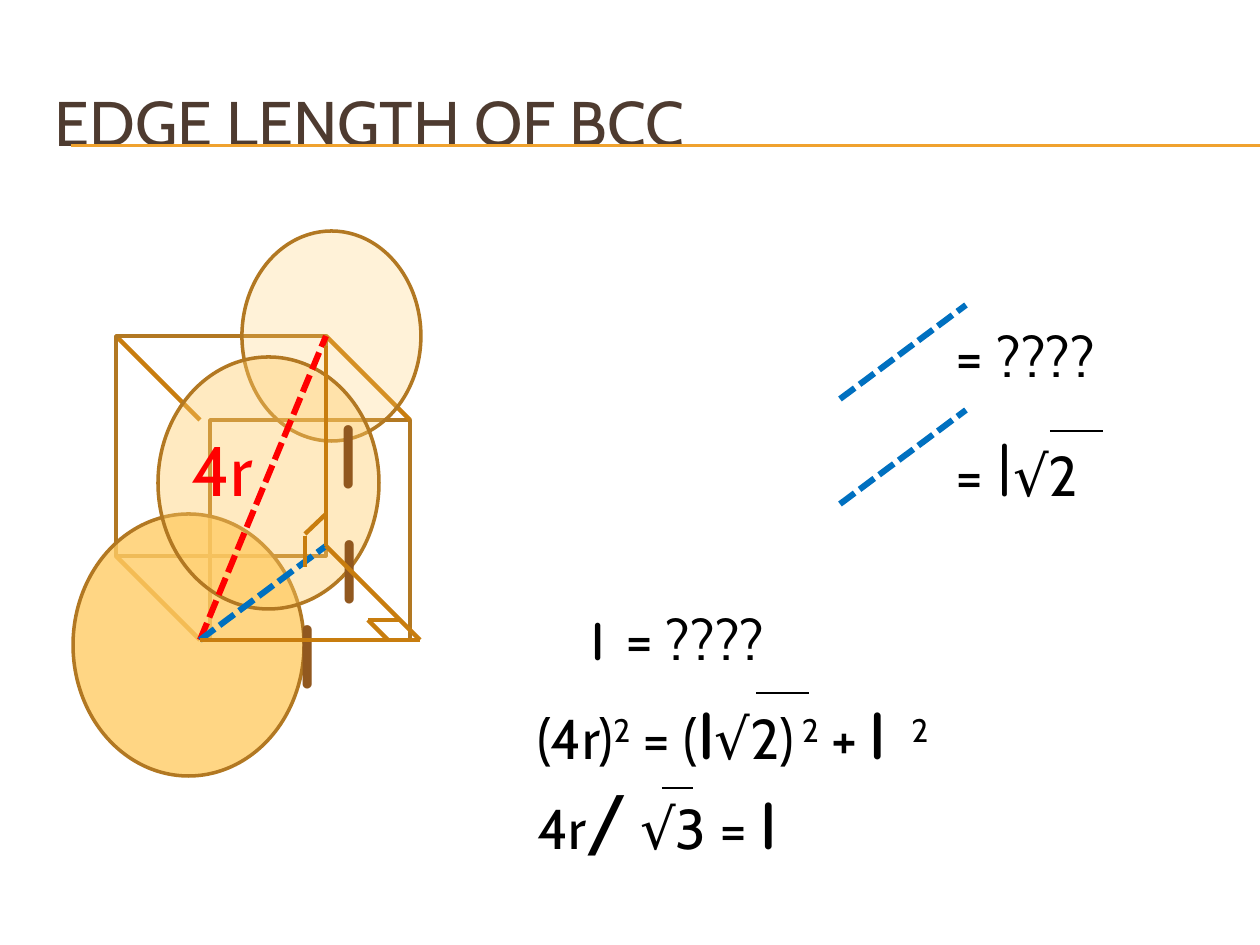
from lxml.etree import SubElement
from pptx import Presentation
from pptx.dml.color import RGBColor
from pptx.enum.dml import MSO_LINE
from pptx.enum.shapes import MSO_CONNECTOR, MSO_SHAPE
from pptx.enum.text import MSO_ANCHOR, MSO_AUTO_SIZE, PP_ALIGN
from pptx.oxml.ns import qn
from pptx.util import Emu, Pt

COLORS = {
    "rule": "F0A22E", "title": "4E3B30", "edge": "C87D0E", "outline": "B27822",
    "atom": "FFCC66", "diagonal": "FF0000", "base": "0070C0",
    "length": "91581F", "ink": "000000",
}
BODY, SYMBOL = "Cabin", "Comic Neue"


def px(length):
    """Turn pixels at 126 to the inch into EMU."""
    return Emu(round(length * 914400 / 126))


def rgb(name):
    """Look up a colour by its role."""
    return RGBColor.from_string(COLORS[name])


def add_line(slide, start, end, color, width, dashed=False):
    """Draw a straight line without a shadow."""
    line = slide.shapes.add_connector(
        MSO_CONNECTOR.STRAIGHT, *map(px, (*start, *end)))
    line.line.color.rgb = rgb(color)
    line.line.width = Pt(width)
    if dashed:
        line.line.dash_style = MSO_LINE.SQUARE_DOT
    SubElement(line.element.spPr, qn("a:effectLst"))


def add_outlined(slide, preset, box, opacity=None):
    """Draw a cube face, or an atom when an opacity is given."""
    outlined = slide.shapes.add_shape(preset, *map(px, box))
    outlined.shadow.inherit = False
    outlined.line.color.rgb = rgb("outline")
    outlined.line.width = Pt(2)
    if opacity is None:
        outlined.fill.background()
        return
    outlined.fill.solid()
    outlined.fill.fore_color.rgb = rgb("atom")
    tint = outlined.element.spPr.find(qn("a:solidFill")).find(qn("a:srgbClr"))
    SubElement(tint, qn("a:alpha"), val=str(opacity * 1000))


def format_run(run, size, color, font=BODY, bold=False, raised=False):
    """Set the look of one run."""
    run.font.size = Pt(size)
    run.font.name = font
    run.font.bold = bold
    run.font.color.rgb = rgb(color)
    if raised:
        run.font._element.set("baseline", "30000")


def add_text(slide, box, parts, color="ink", wrap=False, indent=0):
    """Write one line of text from (text, size, options) parts."""
    frame = slide.shapes.add_textbox(*map(px, box)).text_frame
    frame.word_wrap = wrap
    frame.auto_size = MSO_AUTO_SIZE.SHAPE_TO_FIT_TEXT
    frame.margin_left += px(indent)
    for text, size, options in parts:
        run = frame.paragraphs[0].add_run()
        run.text = text
        format_run(run, size, color, **options)


def add_title(slide):
    """Place the heading and its double rule."""
    title = slide.shapes.title
    title.left, title.top, title.width, title.height = map(px, (42, 63, 1197, 116))
    frame = title.text_frame
    frame.text = "EDGE LENGTH OF BCC"
    frame.vertical_anchor = MSO_ANCHOR.MIDDLE
    frame.paragraphs[0].alignment = PP_ALIGN.LEFT
    format_run(frame.paragraphs[0].runs[0], 36, "title")
    for y in (145, 146):
        add_line(slide, (71, y), (1260, y), "rule", 0.75)


def add_unit_cell(slide):
    """Draw the cube with its three atoms."""
    add_line(slide, (116, 336), (200, 420), "edge", 2.5)
    for face in ((116, 336, 210, 220), (210, 420, 200, 220)):
        add_outlined(slide, MSO_SHAPE.RECTANGLE, face)
    for x, y in ((326, 336), (116, 556)):
        add_line(slide, (x, y), (x + 84, y + 84), "edge", 2.5)
    atoms = (((242, 231, 179, 210), 25), ((73, 514, 231, 262), 80),
             ((158, 357, 221, 252), 40))
    for box, opacity in atoms:
        add_outlined(slide, MSO_SHAPE.OVAL, box, opacity)


def add_triangles(slide):
    """Draw the diagonals, edges, right angles and length labels."""
    near, top, back, side = (200, 640), (326, 336), (326, 546), (420, 640)
    add_line(slide, near, top, "diagonal", 3.5, dashed=True)
    add_line(slide, near, back, "base", 3.5, dashed=True)
    edges = ((back, side), (near, side), (back, (326, 346)))
    right_angles = (((368, 620), (399, 620)), ((368, 620), (388, 640)),
                    ((305, 534), (326, 514)), ((305, 536), (305, 567)))
    add_text(slide, (179, 420, 91, 97), [("4r", 40, {})], "diagonal")
    for x, y in ((284, 588), (325, 388), (326, 503)):
        add_text(slide, (x, y, 43, 127),
                 [("l", 54, {"font": SYMBOL, "bold": True})], "length")
    for start, end in edges + right_angles:
        add_line(slide, start, end, "edge", 2.5)


def add_equations(slide):
    """Write the equations with their root bars and line keys."""
    strong = {"font": SYMBOL, "bold": True}
    raised = {"raised": True}
    add_text(slide, (567, 598, 226, 81),
             [(" ", 32, {}), ("l ", 32, strong), ("= ????", 32, {})])
    add_text(slide, (882, 315, 257, 81), [("= ????", 32, {})], indent=61)
    add_text(slide, (882, 413, 222, 106),
             [("= ", 32, {}), ("l", 44, {"font": SYMBOL}), ("√2", 32, {})],
             indent=61)
    add_text(slide, (525, 683, 630, 97),
             [("(4r)", 32, {}), ("2", 32, raised), (" = (", 32, {}),
              ("l", 40, strong), ("√2)", 32, {}), (" 2", 32, raised),
              (" + ", 32, {}), ("l ", 40, strong), ("2", 32, raised)], wrap=True)
    add_text(slide, (525, 766, 630, 106),
             [("4r", 32, {}), ("/", 44, {}), (" √3 = ", 32, {}),
              ("l", 40, strong)], wrap=True)
    for y in (399, 504):
        add_line(slide, (840, y), (966, y - 94), "base", 3.5, dashed=True)
    for left, right, y in ((1050, 1103, 431), (756, 809, 693), (662, 693, 788)):
        add_line(slide, (left, y), (right, y), "ink", 1.5)


def main():
    """Build and save the slide."""
    deck = Presentation()
    deck.slide_width, deck.slide_height = px(1260), px(945)
    slide = deck.slides.add_slide(deck.slide_layouts[5])
    add_title(slide)
    add_unit_cell(slide)
    add_triangles(slide)
    add_equations(slide)
    deck.save("out.pptx")


if __name__ == "__main__":
    main()
